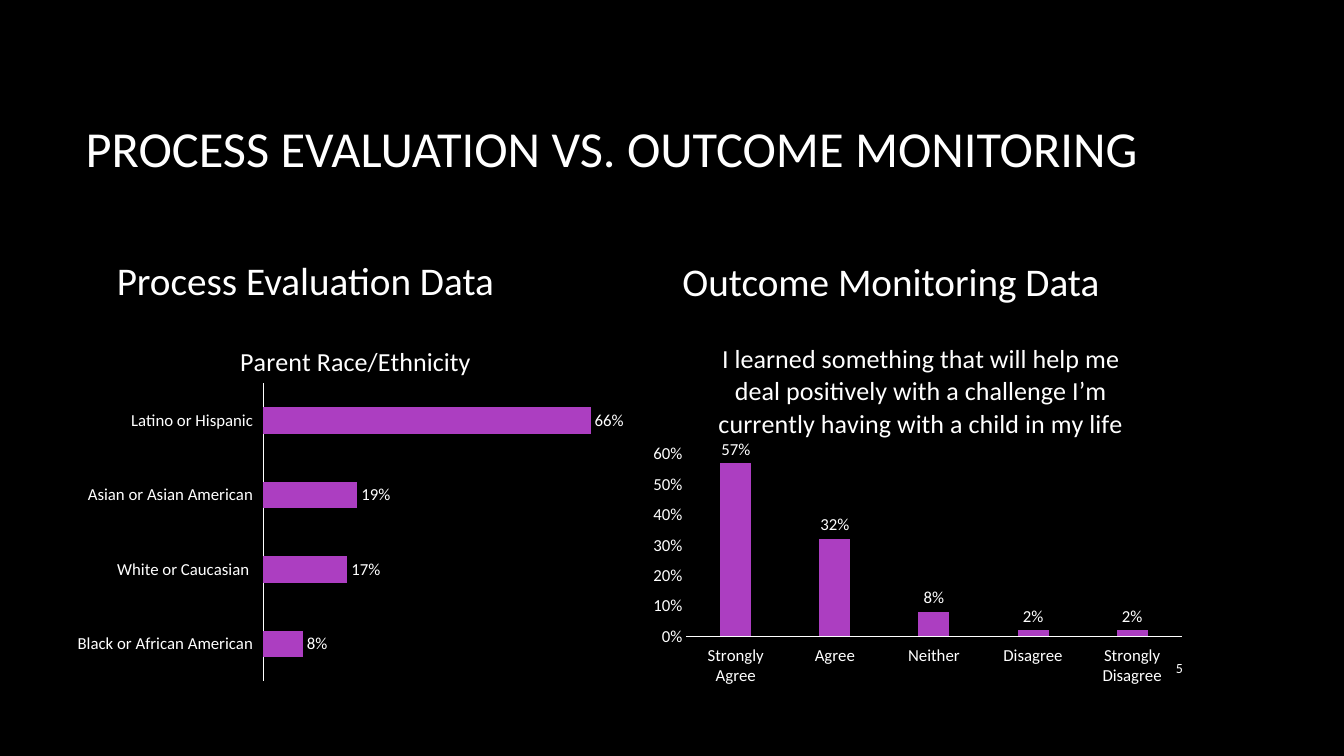
from dataclasses import dataclass

from lxml.etree import SubElement
from pptx import Presentation
from pptx.chart.data import CategoryChartData
from pptx.dml.color import RGBColor
from pptx.enum.chart import XL_CHART_TYPE, XL_LABEL_POSITION, XL_TICK_LABEL_POSITION, XL_TICK_MARK
from pptx.enum.text import MSO_ANCHOR, PP_ALIGN
from pptx.oxml.ns import qn
from pptx.util import Inches, Pt

COLORS = {"background": "000000", "text": "FFFFFF", "bar": "AC3EC1"}
FONT = "Calibri"
WIDTH, HEIGHT = Inches(13.333), Inches(7.5)
COLUMNS, ROWS = 1333, 750  # grid of hundredths of an inch


@dataclass
class Area:
    """Position and size in grid columns and rows."""
    left: int
    top: int
    width: int
    height: int

    def emu(self) -> tuple[int, int, int, int]:
        return (WIDTH * self.left // COLUMNS, HEIGHT * self.top // ROWS,
                WIDTH * self.width // COLUMNS, HEIGHT * self.height // ROWS)


@dataclass
class Panel:
    """A heading with its bar chart; title and plot places are shares of the chart."""
    heading: str
    heading_area: Area
    chart_area: Area
    chart_type: XL_CHART_TYPE
    title: str
    title_place: dict[str, float]
    plot_place: dict[str, float]
    values: dict[str, float]
    axis_maximum: float
    gap: int
    overlap: int
    value_axis_shown: bool


PANELS = [
    Panel("Process Evaluation Data", Area(106, 243, 515, 63), Area(75, 314, 547, 369),
          XL_CHART_TYPE.BAR_CLUSTERED, "Parent Race/Ethnicity",
          {"x": 0.29, "y": 0.06}, {"x": 0.34, "y": 0.18, "w": 0.63, "h": 0.8},
          {"Black or African American": 0.08, "White or Caucasian ": 0.17,
           "Asian or Asian American": 0.19, "Latino or Hispanic": 0.66},
          0.7, 182, 0, False),
    Panel("Outcome Monitoring Data", Area(667, 244, 516, 63), Area(637, 314, 546, 369),
          XL_CHART_TYPE.COLUMN_CLUSTERED,
          "I learned something that will help me deal positively with a challenge "
          "I’m currently having with a child in my life",
          {"x": 0.13, "y": 0.05}, {"x": 0.08, "y": 0.37, "w": 0.9, "h": 0.49},
          {"Strongly Agree": 0.57, "Agree": 0.32, "Neither": 0.08,
           "Disagree": 0.02, "Strongly Disagree": 0.02},
          0.6, 219, -27, True),
]


def color(name: str) -> RGBColor:
    return RGBColor.from_string(COLORS[name])


def format_font(font, size: float) -> None:
    font.name, font.size, font.bold = FONT, Pt(size), False
    font.color.rgb = color("text")


def write(box, text: str, *, size: float, anchor=MSO_ANCHOR.MIDDLE,
          align=PP_ALIGN.LEFT, space_after: float = 0) -> None:
    frame = box.text_frame
    frame.word_wrap = True
    frame.vertical_anchor = anchor
    para = frame.paragraphs[0]
    para.alignment = align
    para.space_after = Pt(space_after)
    span = para.add_run()
    span.text = text
    format_font(span.font, size)


def place(element, shares: dict[str, float], *, inner: bool = False) -> None:
    """Give a chart title or plot area a manual layout."""
    layout = element.get_or_add_layout() if hasattr(element, "get_or_add_layout") else element.find(qn("c:layout"))
    if layout is None:
        layout = SubElement(element, qn("c:layout"))
        element.insert(0, layout)
    manual = SubElement(layout, qn("c:manualLayout"))
    if inner:
        SubElement(manual, qn("c:layoutTarget"), val="inner")
    for key in ("x", "y"):
        SubElement(manual, qn(f"c:{key}Mode"), val="edge")
    for key, share in shares.items():
        SubElement(manual, qn(f"c:{key}"), val=str(share))


def format_axes(chart, panel: Panel) -> None:
    category_axis, value_axis = chart.category_axis, chart.value_axis
    for axis in (category_axis, value_axis):
        axis.major_tick_mark = axis.minor_tick_mark = XL_TICK_MARK.NONE
        axis.has_major_gridlines = False
        format_font(axis.tick_labels.font, 12)
    category_axis.tick_label_position = XL_TICK_LABEL_POSITION.LOW
    category_axis.format.line.color.rgb = color("text")
    category_axis.format.line.width = Pt(0.75)
    value_axis.minimum_scale, value_axis.maximum_scale = 0, panel.axis_maximum
    value_axis.major_unit = 0.1
    value_axis.tick_labels.number_format = "0%"
    value_axis.tick_labels.number_format_is_linked = False
    value_axis.format.line.fill.background()
    value_axis.visible = panel.value_axis_shown


def add_bar_chart(page, panel: Panel) -> None:
    data = CategoryChartData(number_format="0%")
    data.categories = list(panel.values)
    data.add_series("Series 1", list(panel.values.values()))
    chart = page.shapes.add_chart(panel.chart_type, *panel.chart_area.emu(), data).chart
    format_font(chart.font, 10)
    chart.has_legend = False
    chart.has_title = True
    para = chart.chart_title.text_frame.paragraphs[0]
    span = para.add_run()
    span.text = panel.title
    format_font(span.font, 18.6)
    place(chart.chart_title._element, panel.title_place)
    format_axes(chart, panel)

    plot = chart.plots[0]
    plot.vary_by_categories = False
    plot.gap_width, plot.overlap = panel.gap, panel.overlap
    fill = plot.series[0].format.fill
    fill.solid()
    fill.fore_color.rgb = color("bar")
    plot.has_data_labels = True
    labels = plot.data_labels
    labels.show_value = True
    labels.position = XL_LABEL_POSITION.OUTSIDE_END
    labels.number_format, labels.number_format_is_linked = "0%", False
    format_font(labels.font, 12)
    place(chart._chartSpace.chart.plotArea, panel.plot_place, inner=True)


def main() -> None:
    deck = Presentation()
    deck.slide_width, deck.slide_height = WIDTH, HEIGHT
    page = deck.slides.add_slide(deck.slide_layouts[5])
    page.background.fill.solid()
    page.background.fill.fore_color.rgb = color("background")

    title = page.shapes.title
    title.left, title.top, title.width, title.height = Area(75, 67, 1108, 159).emu()
    write(title, "PROCESS EVALUATION VS. OUTCOME MONITORING", size=36)
    for panel in PANELS:
        heading = page.shapes.add_textbox(*panel.heading_area.emu())
        write(heading, panel.heading, size=28, anchor=MSO_ANCHOR.BOTTOM, space_after=10)
        add_bar_chart(page, panel)
    number = page.shapes.add_textbox(*Area(1123, 642, 60, 41).emu())
    write(number, "5", size=10, align=PP_ALIGN.RIGHT)
    deck.save("out.pptx")


if __name__ == "__main__":
    main()
